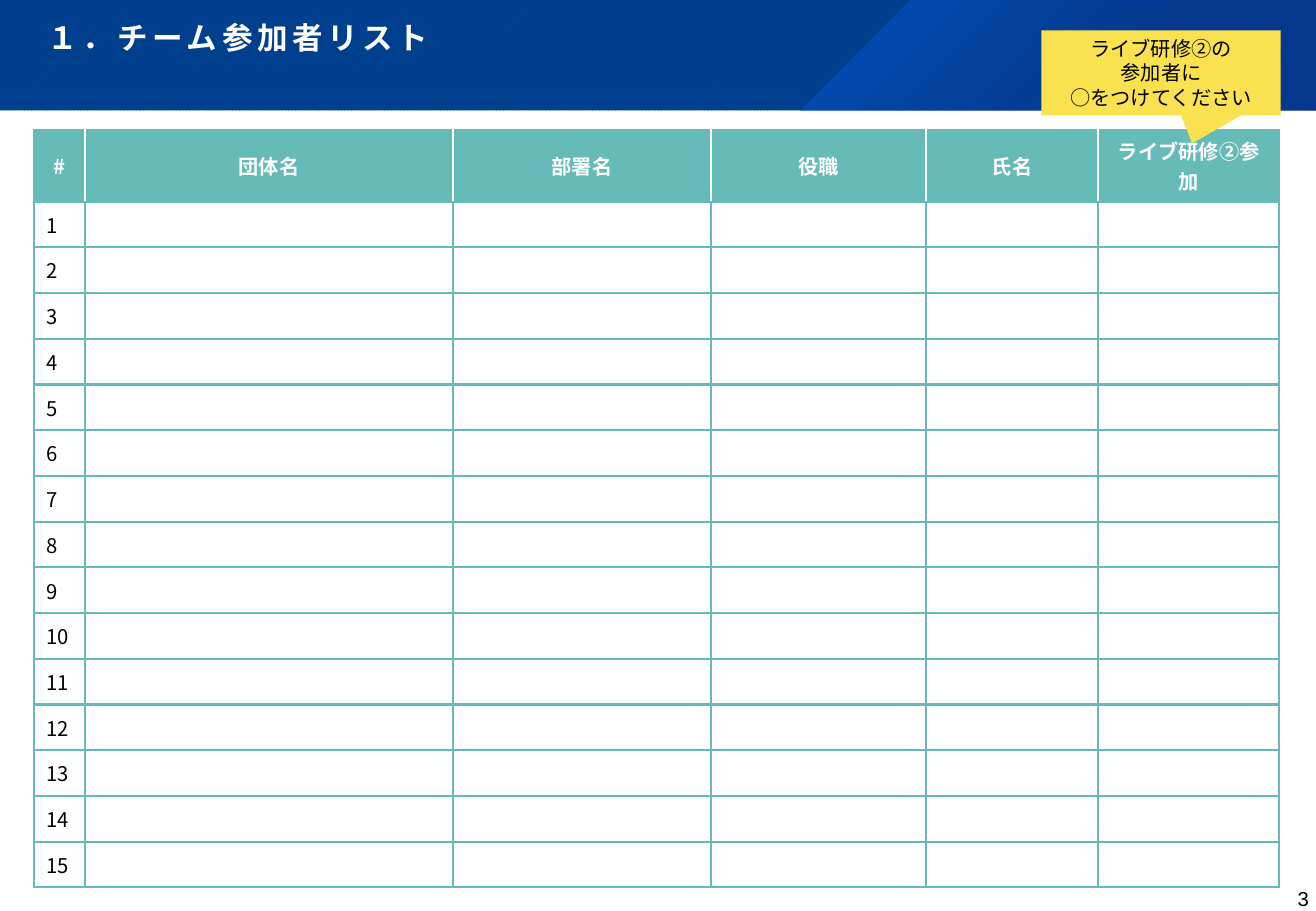
import pptx
import pptx.dml.color
import pptx.enum.dml
import pptx.enum.shapes
import pptx.enum.text
import pptx.oxml
import pptx.oxml.ns
import pptx.util
from lxml import etree

Inches = pptx.util.Inches
Pt = pptx.util.Pt
qn = pptx.oxml.ns.qn
Align = pptx.enum.text.PP_ALIGN
Anchor = pptx.enum.text.MSO_ANCHOR
Kind = pptx.enum.shapes.MSO_SHAPE

WIDE, HIGH = 10.83, 7.5
CJK = "Noto Sans CJK JP"
COLORS = {
    "band": "004292", "stripe": "003579", "glow": "0064DF", "deep": "0C338E",
    "teal": "66BAB7", "note": "FAE14F", "white": "FFFFFF", "black": "000000",
}
HEADS = ["#", "団体名", "部署名", "役職", "氏名", "ライブ研修②参加"]
COLS = [0.42, 3.03, 2.12, 1.77, 1.42, 1.49]
ROWS = 15


def rgb(name):
    return pptx.dml.color.RGBColor.from_string(COLORS[name])


def put_text(frame, *lines, size=12, font=CJK, color="black", bold=False,
             align=Align.LEFT, gap=None, track=0):
    """Write one paragraph per line into a text frame."""
    for i, line in enumerate(lines):
        para = frame.paragraphs[0] if i == 0 else frame.add_paragraph()
        para.alignment = align
        para.line_spacing = gap
        if not line:
            end = etree.SubElement(para._p, qn("a:endParaRPr"))
            end.set("sz", str(size * 100))
            continue
        run = para.add_run()
        run.text = line
        run.font.size = Pt(size)
        run.font.name = font
        run.font.bold = bold
        run.font.color.rgb = rgb(color)
        props = run._r.get_or_add_rPr()
        etree.SubElement(props, qn("a:ea")).set("typeface", CJK)
        if track:
            props.set("spc", str(round(track * 100)))


def set_pad(frame, left, top, right, bottom):
    frame.margin_left, frame.margin_top = Inches(left), Inches(top)
    frame.margin_right, frame.margin_bottom = Inches(right), Inches(bottom)


def plain(shape):
    shape.shadow.inherit = False
    shape.line.fill.background()


def fade(shape, stops):
    """Fill with a radial gradient from the top left corner."""
    marks = "".join(
        f'<a:gs pos="{pos * 1000}"><a:srgbClr val="{COLORS[name]}">'
        f'<a:alpha val="{alpha * 1000}"/></a:srgbClr></a:gs>'
        for pos, name, alpha in stops)
    grad = pptx.oxml.parse_xml(
        f'<a:gradFill {pptx.oxml.ns.nsdecls("a")} rotWithShape="1">'
        f'<a:gsLst>{marks}</a:gsLst><a:path path="circle">'
        '<a:fillToRect r="100000" b="100000"/></a:path></a:gradFill>')
    shape.fill.background()
    blank = shape._element.spPr.find(qn("a:noFill"))
    blank.getparent().replace(blank, grad)


def edge(cell, **sides):
    """Draw the cell borders; sides come in the order L, R, T, B."""
    props = cell._tc.get_or_add_tcPr()
    for side, name in sides.items():
        line = etree.SubElement(props, qn(f"a:ln{side}"), w=str(Pt(1.5)))
        fill = etree.SubElement(line, qn("a:solidFill"))
        etree.SubElement(fill, qn("a:srgbClr"), val=COLORS[name])


def add_head(slide, x, y, w, h):
    # Striped band
    band = slide.shapes.add_shape(
        Kind.RECTANGLE, Inches(x), Inches(y), Inches(w), Inches(h))
    plain(band)
    band.fill.patterned()
    band.fill.pattern = pptx.enum.dml.MSO_PATTERN.DARK_UPWARD_DIAGONAL
    band.fill.fore_color.rgb = rgb("stripe")
    band.fill.back_color.rgb = rgb("band")

    # Slanted panel at the right end
    pen = slide.shapes.build_freeform(
        Inches(x + 7.49), Inches(y), scale=1.0)
    pen.add_line_segments(
        [(Inches(x + w), Inches(y)), (Inches(x + w), Inches(y + h)),
         (Inches(x + 6.58), Inches(y + h))], close=True)
    panel = pen.convert_to_shape()
    plain(panel)
    fade(panel, [(0, "glow", 50), (62, "deep", 55)])

    # Title, raised above the band
    title = slide.shapes.title
    slide.shapes._spTree.append(title._element)
    title.left, title.top = Inches(x), Inches(y)
    title.width, title.height = Inches(w), Inches(h)
    frame = title.text_frame
    frame.auto_size = pptx.enum.text.MSO_AUTO_SIZE.NONE
    frame.vertical_anchor = Anchor.BOTTOM
    set_pad(frame, 0.39, 0, 0.36, 0.45)
    put_text(frame, "１．チーム参加者リスト", size=18.1, font="Lato",
             color="white", bold=True, gap=0.9, track=2.7)


def add_list(slide, x, y, w, h):
    table = slide.shapes.add_table(
        ROWS + 1, len(COLS), Inches(x), Inches(y), Inches(w), Inches(h)).table
    for col, wide in zip(table.columns, COLS):
        col.width = Inches(wide)
    top = 0.59
    for r, row in enumerate(table.rows):
        head = r == 0
        row.height = Inches(top if head else (h - top) / ROWS)
        words = HEADS if head else [str(r)] + [""] * (len(COLS) - 1)
        inner = "white" if head else "teal"
        for c, (cell, word) in enumerate(zip(row.cells, words)):
            edge(cell, L=inner if c else "teal",
                 R=inner if c < len(COLS) - 1 else "teal", T="teal", B="teal")
            cell.fill.solid()
            cell.fill.fore_color.rgb = rgb("teal" if head else "white")
            cell.vertical_anchor = Anchor.MIDDLE
            put_text(cell.text_frame, word, bold=head,
                     color="white" if head else "black",
                     align=Align.CENTER if head else Align.LEFT)


def add_note(slide, x, y, w, h):
    note = slide.shapes.add_shape(
        Kind.RECTANGULAR_CALLOUT, Inches(x), Inches(y), Inches(w), Inches(h))
    plain(note)
    note.adjustments[0], note.adjustments[1] = 0.13, 0.83
    note.fill.solid()
    note.fill.fore_color.rgb = rgb("note")
    note.text_frame.vertical_anchor = Anchor.MIDDLE
    put_text(note.text_frame, "ライブ研修②の", "参加者に", "○をつけてください",
             font="Lato", align=Align.CENTER)


def add_page(slide, x, y, w, h):
    box = slide.shapes.add_textbox(Inches(x), Inches(y), Inches(w), Inches(h))
    box.text_frame.word_wrap = True
    set_pad(box.text_frame, 0, 0, 0, 0)
    put_text(box.text_frame, "3", font="Arial", align=Align.RIGHT)


def main():
    deck = pptx.Presentation()
    deck.slide_width, deck.slide_height = Inches(WIDE), Inches(HIGH)
    slide = deck.slides.add_slide(deck.slide_layouts[5])
    add_head(slide, 0, 0, WIDE, 0.91)
    add_page(slide, 10.08, 7.3, 0.69, 0.15)
    add_list(slide, 0.28, 1.07, sum(COLS), 6.24)
    add_note(slide, 8.57, 0.25, 1.97, 0.7)
    deck.save("out.pptx")


if __name__ == "__main__":
    main()
